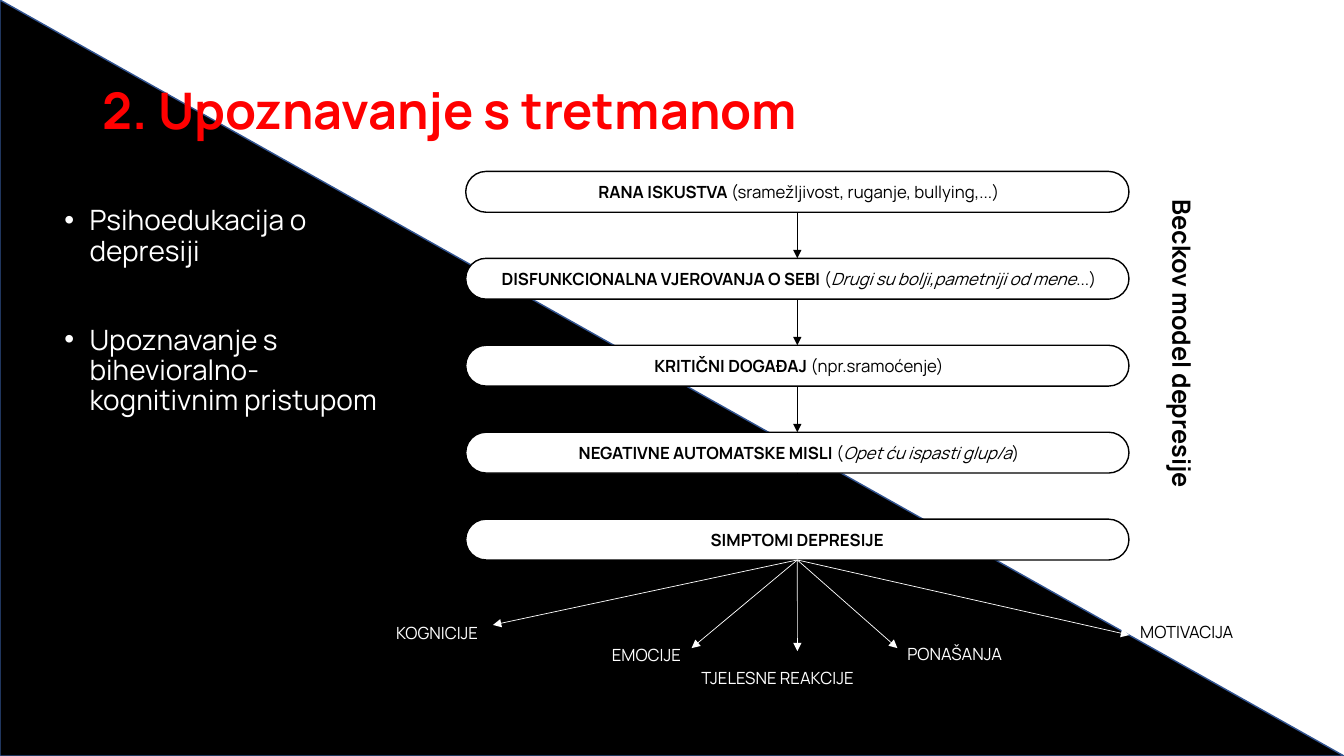
from pptx import Presentation
from pptx import util as u
from pptx.dml.color import RGBColor
from pptx.enum import shapes, text
from pptx.oxml import parse_xml
from pptx.oxml.ns import nsdecls, qn

BLACK = RGBColor(0, 0, 0)
WHITE = RGBColor(255, 255, 255)
RED = RGBColor(255, 0, 0)
NAVY = RGBColor(0x32, 0x54, 0x91)
FONT = "Manrope"
BOLD, ITAL = "b", "i"


class Deck:
    """Draws on one slide; lengths are percentages of its width and height."""

    def __init__(self, wide, high):
        self.prs = Presentation()
        self.prs.slide_width = u.Inches(wide)
        self.prs.slide_height = u.Inches(high)
        self.slide = self.prs.slides.add_slide(self.prs.slide_layouts[6])
        self.items = self.slide.shapes

    def span(self, *sizes):
        """Turn alternating x and y shares into slide lengths."""
        full = (self.prs.slide_width, self.prs.slide_height)
        return [u.Emu(round(s * full[n % 2] / 100)) for n, s in enumerate(sizes)]

    def style(self, run, size, color, marks=""):
        font = run.font
        font.name, font.size = FONT, u.Pt(size)
        font.color.rgb = color
        font.bold, font.italic = BOLD in marks, ITAL in marks

    def shape(self, kind, box, fill, line):
        item = self.items.add_shape(kind, *self.span(*box))
        item.shadow.inherit = False
        item.fill.solid()
        item.fill.fore_color.rgb = fill
        item.line.color.rgb = line
        item.line.width = u.Pt(1)
        return item

    def pill(self, box, parts):
        item = self.shape(shapes.MSO_SHAPE.ROUNDED_RECTANGLE, box, WHITE, BLACK)
        item.adjustments[0] = 0.5
        para = item.text_frame.paragraphs[0]
        para.alignment = text.PP_ALIGN.CENTER
        for words, marks in parts:
            run = para.add_run()
            run.text = words
            self.style(run, 12, BLACK, marks)
        return item

    def label(self, box, words, size, color, marks=""):
        item = self.items.add_textbox(*self.span(*box))
        frame = item.text_frame
        frame.word_wrap = True
        frame.text = words
        for para in frame.paragraphs:
            for run in para.runs:
                self.style(run, size, color, marks)
        return item

    def bullets(self, box, lines, size, color, gap):
        item = self.label(box, "\n".join(lines), size, color)
        for n, para in enumerate(item.text_frame.paragraphs):
            para.line_spacing = 0.9
            para.space_before = u.Pt(gap if n else 0)
            props = para._p.get_or_add_pPr()
            props.set("marL", str(u.Inches(0.25)))
            props.set("indent", str(-u.Inches(0.25)))
            props.append(parse_xml(f'<a:buFont {nsdecls("a")} typeface="Arial"/>'))
            props.append(parse_xml(f'<a:buChar {nsdecls("a")} char="•"/>'))

    def arrow(self, start, color, goal=None, tip=(0, 0)):
        """Run from the bottom of start to the top of goal, or to a free tip."""
        end = self.span(*tip)
        item = self.items.add_connector(shapes.MSO_CONNECTOR.STRAIGHT, 0, 0, *end)
        item.begin_connect(start, 2)
        if goal is not None:
            item.end_connect(goal, 0)
        item.line.color.rgb = color
        item.line.width = u.Pt(0.5)
        props = item._element.spPr
        props.find(qn("a:ln")).append(
            parse_xml(f'<a:tailEnd {nsdecls("a")} type="triangle"/>'))
        props.append(parse_xml(f'<a:effectLst {nsdecls("a")}/>'))


STAGES = [
    [(" RANA ISKUSTVA ", BOLD), ("(sramežljivost, ruganje, bullying,...)", "")],
    [(" DISFUNKCIONALNA VJEROVANJA O SEBI ", BOLD), ("(", ""),
     ("Drugi su bolji,pametniji od mene", ITAL), ("...)", "")],
    [(" KRITIČNI DOGAĐAJ ", BOLD), ("(npr.sramoćenje)", "")],
    [(" NEGATIVNE AUTOMATSKE MISLI ", BOLD), ("(", ""),
     ("Opet ću ispasti glup/a", ITAL), (")", "")],
    [("SIMPTOMI DEPRESIJE", BOLD)],
]

# words, left, top, width, colour, arrow tip
SIGNS = [
    ("KOGNICIJE", 28.73, 81.73, 8.25, WHITE, (36.68, 82.67)),
    ("EMOCIJE", 44.79, 84.67, 8.25, WHITE, (51.46, 85.73)),
    ("TJELESNE REAKCIJE", 51.46, 87.73, 15.83, WHITE, (59.33, 86.13)),
    ("PONAŠANJA", 66.77, 84.53, 9.53, WHITE, (66.77, 85.73)),
    ("MOTIVACIJA", 84.1, 81.6, 9.53, BLACK, (84.02, 84)),
]


def main():
    deck = Deck(13.33, 7.5)
    deck.shape(shapes.MSO_SHAPE.RIGHT_TRIANGLE, (0, 0, 100, 100), BLACK, NAVY)

    title = deck.label((6.9, 5.33, 54, 19.33), "2. Upoznavanje s tretmanom",
                       36, RED, BOLD)
    title.text_frame.vertical_anchor = text.MSO_ANCHOR.MIDDLE
    title.text_frame.paragraphs[0].line_spacing = 0.9

    deck.bullets((4.05, 26.67, 27, 63.5),
                 ["Psihoedukacija o depresiji",
                  "Upoznavanje s bihevioralno-kognitivnim pristupom"],
                 20, WHITE, 42)

    side = deck.label((70.05, 42.8, 35.86, 5.33), "Beckov model depresije",
                      18, BLACK, BOLD)
    side.rotation = 90
    side.text_frame.paragraphs[0].alignment = text.PP_ALIGN.CENTER

    pills = [deck.pill((34.65, 22.67 + 11.5 * n, 49.35, 5.4), parts)
             for n, parts in enumerate(STAGES)]
    for start, goal in zip(pills, pills[1:]):
        deck.arrow(start, BLACK, goal)

    for words, left, top, wide, color, tip in SIGNS:
        deck.arrow(pills[-1], WHITE, tip=tip)
        deck.label((left, top, wide, 4), words, 12, color)

    deck.prs.save("out.pptx")


if __name__ == "__main__":
    main()
